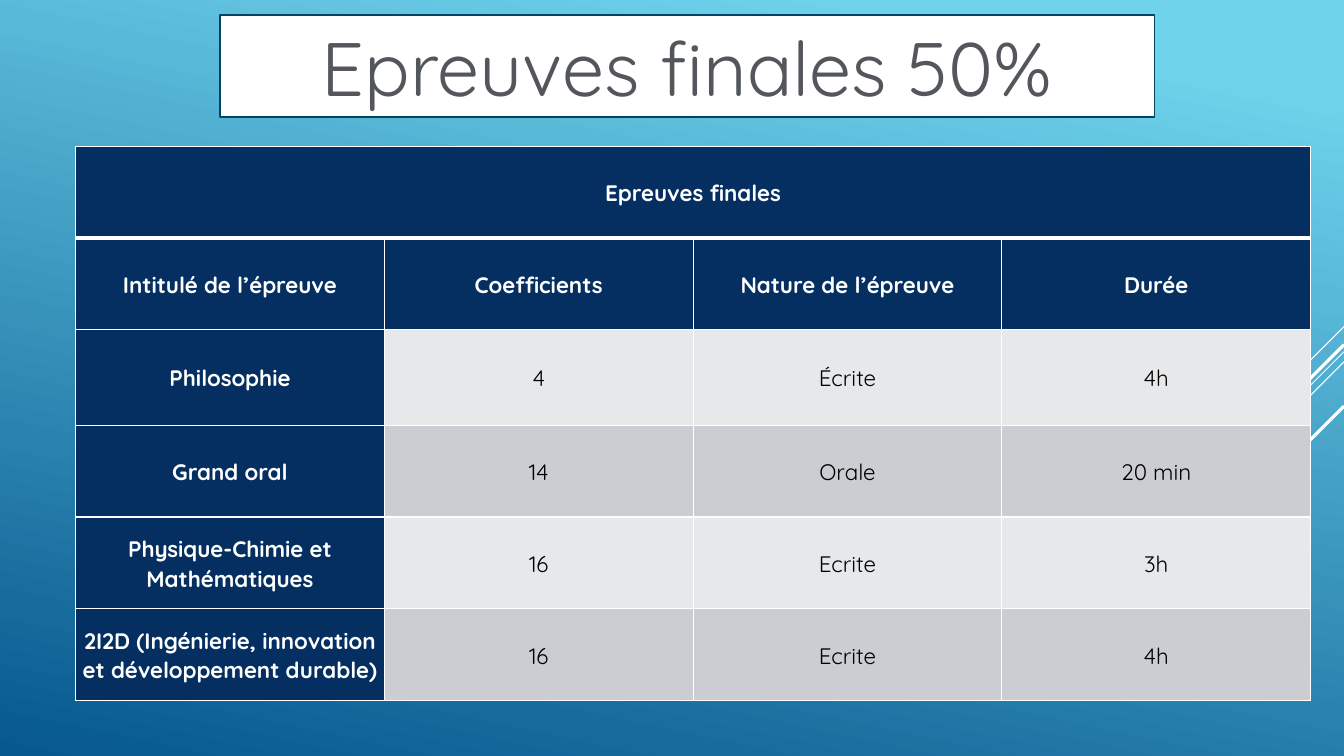
from dataclasses import dataclass

from lxml.etree import SubElement
from pptx import Presentation
from pptx.dml.color import RGBColor
from pptx.enum.shapes import MSO_CONNECTOR, MSO_SHAPE
from pptx.enum.text import MSO_ANCHOR, PP_ALIGN
from pptx.oxml.ns import qn
from pptx.util import Inches, Pt


@dataclass(frozen=True)
class Theme:
    font: str = "Quicksand"
    sky: str = "6ED2EB"
    deep_blue: str = "06588E"
    white: str = "FFFFFF"
    black: str = "000000"
    navy: str = "052F61"
    title_text: str = "53575C"
    title_border: str = "054361"
    bands: tuple = ("E7E8EA", "CCCDD2")
    title_size: int = 54
    table_size: int = 16


theme = Theme()


def style_paragraph(paragraph, text, size, color, bold=False):
    paragraph.text = text
    paragraph.alignment = PP_ALIGN.CENTER
    paragraph.font.name = theme.font
    paragraph.font.size = Pt(size)
    paragraph.font.bold = bold
    paragraph.font.color.rgb = RGBColor.from_string(color)


def add_cell_border(cell, side, width):
    line = SubElement(cell._tc.get_or_add_tcPr(), qn(f"a:ln{side}"), w=str(Pt(width)))
    fill = SubElement(line, qn("a:solidFill"))
    SubElement(fill, qn("a:srgbClr"), val=theme.white)


presentation = Presentation()
presentation.slide_width = Inches(13.33)
presentation.slide_height = Inches(7.5)
slide = presentation.slides.add_slide(presentation.slide_layouts[6])

# Background gradient
background = slide.background.fill
background.gradient()
background.gradient_angle = 258
gradient = ((0.1, theme.sky), (1, theme.deep_blue))
for stop, (position, color) in zip(background.gradient_stops, gradient):
    stop.position = position
    stop.color.rgb = RGBColor.from_string(color)

# Diagonal lines running down from the right edge: top, run, width
diagonals = [(3.24, 1, 0.75), (3.49, 3.26, 0.75), (3.59, 2.07, 0.75),
             (3.42, 1.91, 2.25), (4.03, 1.39, 2.25)]
for top, run, width in diagonals:
    diagonal = slide.shapes.add_connector(
        MSO_CONNECTOR.STRAIGHT, Inches(13.33), Inches(top),
        Inches(13.33 - run), Inches(top + run))
    diagonal.line.color.rgb = RGBColor.from_string(theme.white)
    diagonal.line.width = Pt(width)
    SubElement(diagonal._element.spPr, qn("a:effectLst"))

# Title
title = slide.shapes.add_shape(
    MSO_SHAPE.RECTANGLE, Inches(2.18), Inches(0.15), Inches(9.27), Inches(1.01))
title.shadow.inherit = False
title.fill.solid()
title.fill.fore_color.rgb = RGBColor.from_string(theme.white)
title.line.color.rgb = RGBColor.from_string(theme.title_border)
title.line.width = Pt(1.25)
title.text_frame.vertical_anchor = MSO_ANCHOR.MIDDLE
style_paragraph(title.text_frame.paragraphs[0], "Epreuves finales 50%",
                theme.title_size, theme.title_text)

# Table of final exams
exam_rows = [
    ("Epreuves finales", "", "", ""),
    ("Intitulé de l’épreuve", "Coefficients", "Nature de l’épreuve", "Durée"),
    ("Philosophie", "4", "Écrite", "4h"),
    ("Grand oral", "14", "Orale", "20 min"),
    ("Physique-Chimie et Mathématiques", "16", "Ecrite", "3h"),
    ("2I2D (Ingénierie, innovation et développement durable)", "16", "Ecrite", "4h"),
]
row_heights = [0.91, 0.91, 0.95, 0.91, 0.91, 0.91]
table = slide.shapes.add_table(
    len(exam_rows), 4, Inches(0.75), Inches(1.45),
    Inches(12.25), Inches(sum(row_heights))).table
table.cell(0, 0).merge(table.cell(0, 3))

for row_index, (texts, height) in enumerate(zip(exam_rows, row_heights)):
    table.rows[row_index].height = Inches(height)
    for column_index, text in enumerate(texts):
        cell = table.cell(row_index, column_index)
        is_header = row_index < 2 or column_index == 0
        cell.margin_left = cell.margin_right = Inches(0.07)
        cell.margin_top = cell.margin_bottom = 0
        cell.vertical_anchor = MSO_ANCHOR.MIDDLE
        for side in "LRTB":
            under_heading = (row_index, side) in ((0, "B"), (1, "T"))
            add_cell_border(cell, side, 3 if under_heading else 1)
        cell.fill.solid()
        cell.fill.fore_color.rgb = RGBColor.from_string(
            theme.navy if is_header else theme.bands[row_index % 2])
        if cell.is_spanned:
            continue
        paragraph = cell.text_frame.paragraphs[0]
        style_paragraph(paragraph, text, theme.table_size,
                        theme.white if is_header else theme.black, bold=is_header)
        paragraph.line_spacing = 1.07
        paragraph.space_after = Pt(8)

presentation.save("out.pptx")
